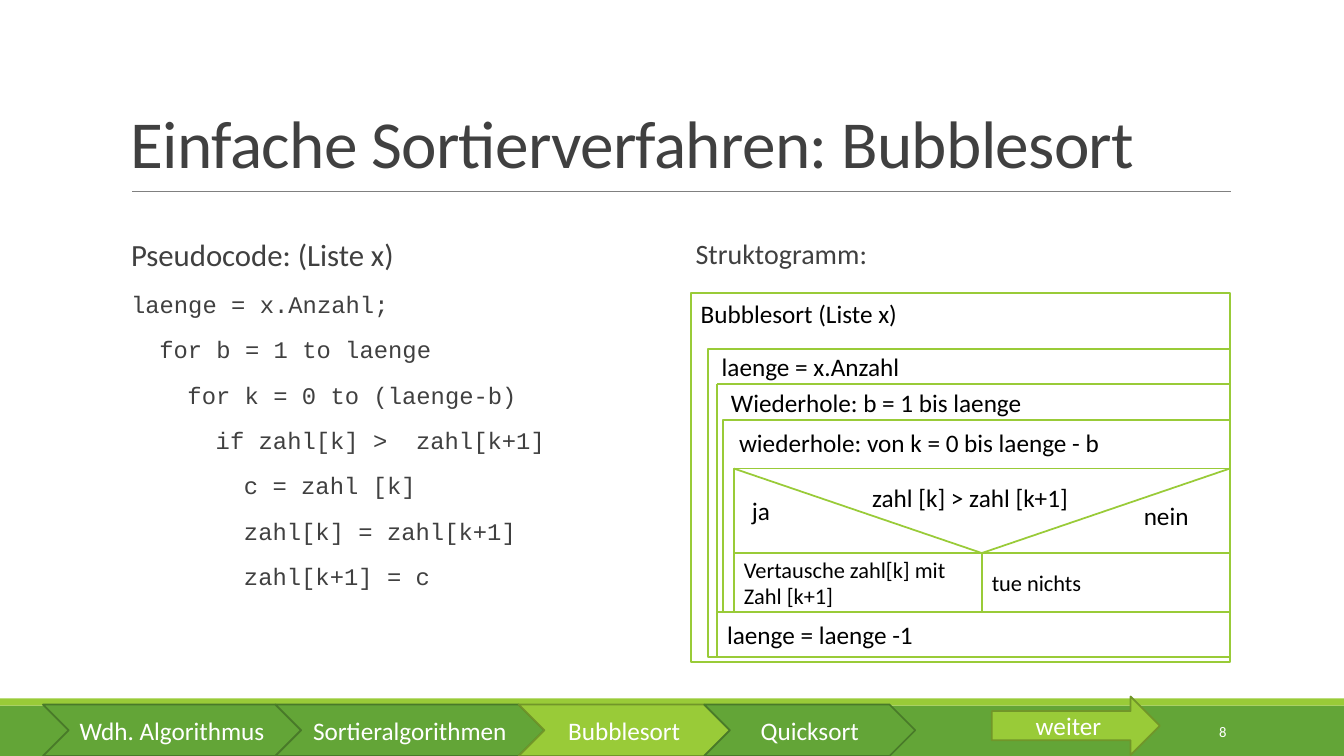
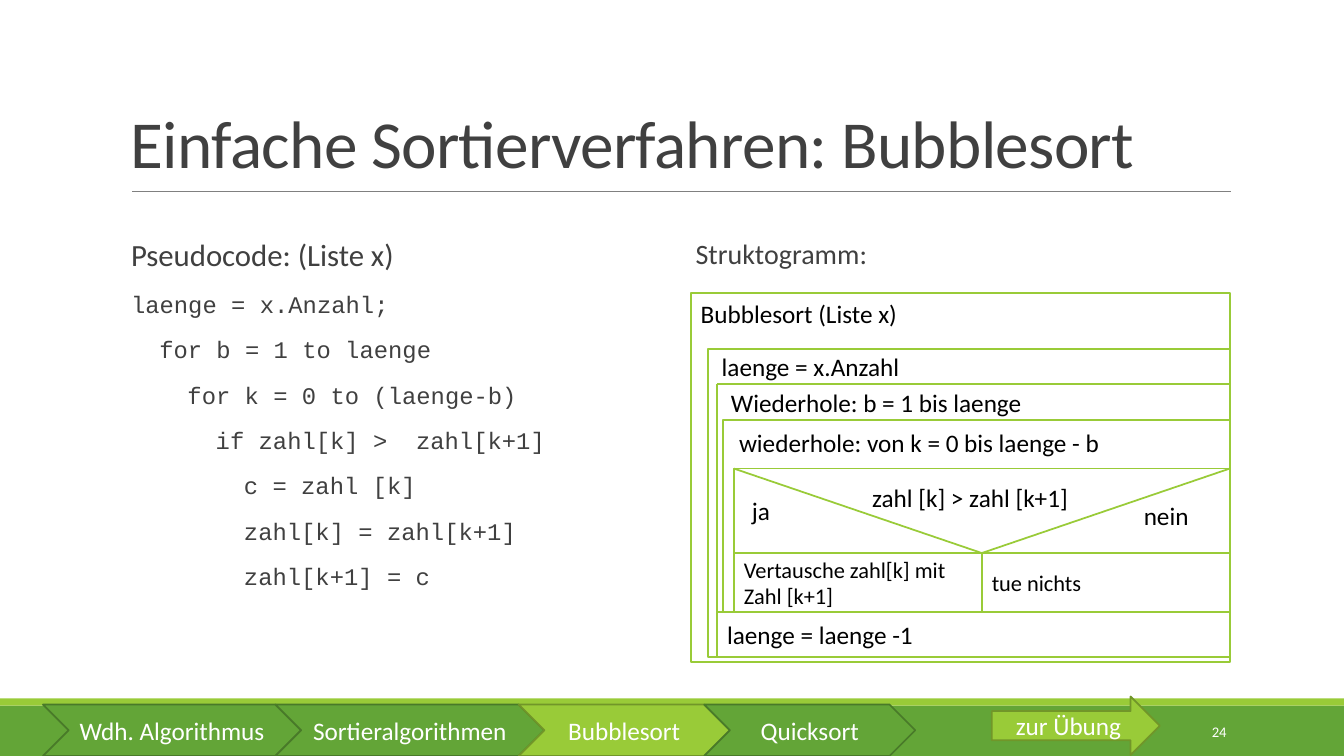
from dataclasses import dataclass

from lxml import etree
from pptx import Presentation
from pptx import util as u
from pptx.dml.color import RGBColor
from pptx.enum import shapes, text
from pptx.oxml import ns

COLORS = {
    "white": "FFFFFF", "black": "000000", "body": "404040", "rule": "808080",
    "green": "63A537", "green_edge": "497A29",
    "lime": "99CB38", "lime_edge": "719629",
}
KIND = shapes.MSO_SHAPE
ALIGN = text.PP_ALIGN
TOP, MIDDLE, BOTTOM = (text.MSO_ANCHOR.TOP, text.MSO_ANCHOR.MIDDLE,
                       text.MSO_ANCHOR.BOTTOM)
EDGE = 1.25
BULLET_INDENT = 0.1
CODE_STEP = 0.28

TITLE = "Einfache Sortierverfahren: Bubblesort"
CHAPTERS = [("Wdh. Algorithmus", 19.2), ("Sortieralgorithmen", 20),
            ("Bubblesort", 15.7), ("Quicksort", 15.7)]
CURRENT = "Bubblesort"
# Each line of code with its nesting level
CODE = [
    (0, "laenge = x.Anzahl;"),
    (1, "for b = 1 to laenge"),
    (2, "for k = 0 to (laenge-b)"),
    (3, "if zahl[k] >  zahl[k+1]"),
    (4, "c = zahl [k]"),
    (4, "zahl[k] = zahl[k+1]"),
    (4, "zahl[k+1] = c"),
]
SLIDES = [("8", "weiter"), ("24", "zur Übung")]


@dataclass
class Box:
    x: float
    y: float
    w: float
    h: float

    def at(self, px, py):
        """Point given in percent of the box."""
        return self.x + self.w * px / 100, self.y + self.h * py / 100

    def inner(self, px, py, pw, ph):
        """Inner box given in percent of the box."""
        return Box(*self.at(px, py), self.w * pw / 100, self.h * ph / 100)

    def emu(self):
        return [u.Inches(v) for v in (self.x, self.y, self.w, self.h)]


PAGE = Box(0, 0, 13.33, 7.5)


def rgb(name):
    return RGBColor.from_string(COLORS[name])


def set_all(obj, **values):
    for name, value in values.items():
        setattr(obj, name, value)


def write(p, words, size, color="black", font="Calibri", align=ALIGN.LEFT):
    p.alignment = align
    r = p.add_run()
    r.text = words
    set_all(r.font, size=u.Pt(size), name=font)
    r.font.color.rgb = rgb(color)
    return r


def frame(sp, anchor=TOP, **margins):
    tf = sp.text_frame
    set_all(tf, word_wrap=True, vertical_anchor=anchor, **margins)
    return tf


def add_text(s, box, words, size, color="black", anchor=TOP, align=ALIGN.LEFT):
    tf = frame(s.shapes.add_textbox(*box.emu()), anchor)
    return tf, write(tf.paragraphs[0], words, size, color, align=align)


def add_block(s, box, fill="white", edge=None, kind=KIND.RECTANGLE, words="",
              size=18, color="black", align=ALIGN.LEFT):
    sp = s.shapes.add_shape(kind, *box.emu())
    sp.shadow.inherit = False
    sp.fill.solid()
    sp.fill.fore_color.rgb = rgb(fill)
    if edge:
        sp.line.color.rgb = rgb(edge)
        sp.line.width = u.Pt(EDGE)
    else:
        sp.line.fill.background()
    if words:
        write(frame(sp, MIDDLE).paragraphs[0], words, size, color, align=align)


def add_line(s, start, end, color="lime", width=EDGE):
    ends = [u.Inches(v) for v in (*start, *end)]
    ln = s.shapes.add_connector(shapes.MSO_CONNECTOR.STRAIGHT, *ends)
    ln.line.color.rgb = rgb(color)
    ln.line.width = u.Pt(width)
    etree.SubElement(ln._element.spPr, ns.qn("a:effectLst"))


def body_paragraph(p, level=0):
    """Body spacing with a blank bullet, moved in by the nesting level."""
    set_all(p, line_spacing=0.9, space_before=u.Pt(12), space_after=u.Pt(2))
    pPr = p._p.get_or_add_pPr()
    pPr.set("marL", str(u.Inches(BULLET_INDENT + CODE_STEP * level)))
    pPr.set("indent", str(u.Inches(-BULLET_INDENT)))
    etree.SubElement(pPr, ns.qn("a:buFont"), typeface="Calibri")
    etree.SubElement(pPr, ns.qn("a:buChar"), char=" ")


def add_body(s, box, heading, size, code=()):
    tf = frame(s.shapes.add_textbox(*box.emu()), margin_left=0, margin_right=0)
    p = tf.paragraphs[0]
    write(p, heading, size, "body")
    body_paragraph(p)
    for level, line in code:
        p = tf.add_paragraph()
        write(p, line, 17, "body", "Courier New")
        body_paragraph(p, level)


def add_header(s, box):
    tf, r = add_text(s, box, TITLE, 48, "body", BOTTOM)
    tf.paragraphs[0].line_spacing = 0.85
    r._r.get_or_add_rPr().set("spc", "-50")
    add_line(s, box.at(1, 103.2), box.at(100, 103.2), "rule", 0.5)


def add_footer_bands(s, box):
    add_block(s, box.inner(0, 12.3, 100, 87.7), "green")
    add_block(s, box.inner(0, 0, 100, 12.3), "lime")


def add_page_number(s, box, number):
    add_text(s, box.inner(81.2, 22.8, 10.8, 70), number, 10.5, "white",
             MIDDLE, ALIGN.RIGHT)


def add_navigation(s, box, next_label):
    label = {"color": "white", "align": ALIGN.CENTER}
    add_block(s, box.inner(73.8, -3.5, 12.5, 101.8), "lime", "lime_edge",
              KIND.RIGHT_ARROW, next_label, **label)
    left, overlap = 3.2, 1.9
    for chapter, width in CHAPTERS:
        tone = "lime" if chapter == CURRENT else "green"
        add_block(s, box.inner(left, 10.5, width, 89.5), tone, tone + "_edge",
                  KIND.CHEVRON, chapter, **label)
        left += width - overlap


def add_structogram(s, box):
    """Nested blocks that share the right edge; columns and rows in percent."""
    body_x, outer_x, inner_x, test_x, split_x = 3.2, 4.9, 6, 8, 54
    body_y, outer_y, inner_y, test_y = 15, 24.6, 34.4, 47.5
    branch_y, last_y, end_y = 70.4, 86.4, 98.6

    blocks = [
        (0, 0, 100, 100, "", 18),
        (body_x, body_y, 100, end_y, "", 18),
        (inner_x, inner_y, 100, last_y, "", 18),
        (test_x, test_y, 100, last_y, "", 18),
        (outer_x, last_y, 100, end_y, "laenge = laenge -1", 18),
        (test_x, branch_y, split_x, last_y,
         "Vertausche zahl[k] mit Zahl [k+1]", 16),
        (split_x, branch_y, 100, last_y, "tue nichts", 16),
    ]
    for x1, y1, x2, y2, words, size in blocks:
        add_block(s, box.inner(x1, y1, x2 - x1, y2 - y1), edge="lime",
                  words=words, size=size)

    corner, split = box.at(outer_x, outer_y), box.at(split_x, branch_y)
    for start, end in [
        (box.at(test_x, test_y), split),
        (box.at(100, test_y), split),
        (box.at(100, outer_y), corner),
        (box.at(outer_x, last_y), corner),
    ]:
        add_line(s, start, end)

    for x, y, width, words in [
        (0, 0, 53, "Bubblesort (Liste x)"),
        (3.9, 14.5, 51, "laenge = x.Anzahl"),
        (5.6, 24, 77, "Wiederhole: b = 1 bis laenge"),
        (7.1, 35, 85, "wiederhole: von k = 0 bis laenge - b"),
        (9.5, 53.3, 14, "ja"),
        (31.8, 50, 46, "zahl [k] > zahl [k+1]"),
        (82.2, 54.9, 15, "nein"),
    ]:
        add_text(s, box.inner(x, y, width, 10.9), words, 18)


def add_bubblesort_slide(prs, number, next_label):
    s = prs.slides.add_slide(prs.slide_layouts[6])
    footer = PAGE.inner(0, 92.4, 100, 7.6)
    add_footer_bands(s, footer)
    add_header(s, PAGE.inner(9, 4.1, 82.6, 20.6))
    add_body(s, PAGE.inner(9, 31.1, 40.5, 54.5), "Pseudocode: (Liste x)", 22,
             CODE)
    add_body(s, PAGE.inner(51, 31.1, 40.5, 54.5), "Struktogramm:", 20)
    add_structogram(s, PAGE.inner(51.4, 38.8, 40.1, 48.8))
    add_page_number(s, footer, number)
    add_navigation(s, footer, next_label)


def main():
    prs = Presentation()
    set_all(prs, slide_width=u.Inches(PAGE.w), slide_height=u.Inches(PAGE.h))
    for number, next_label in SLIDES:
        add_bubblesort_slide(prs, number, next_label)
    prs.save("out.pptx")


if __name__ == "__main__":
    main()
